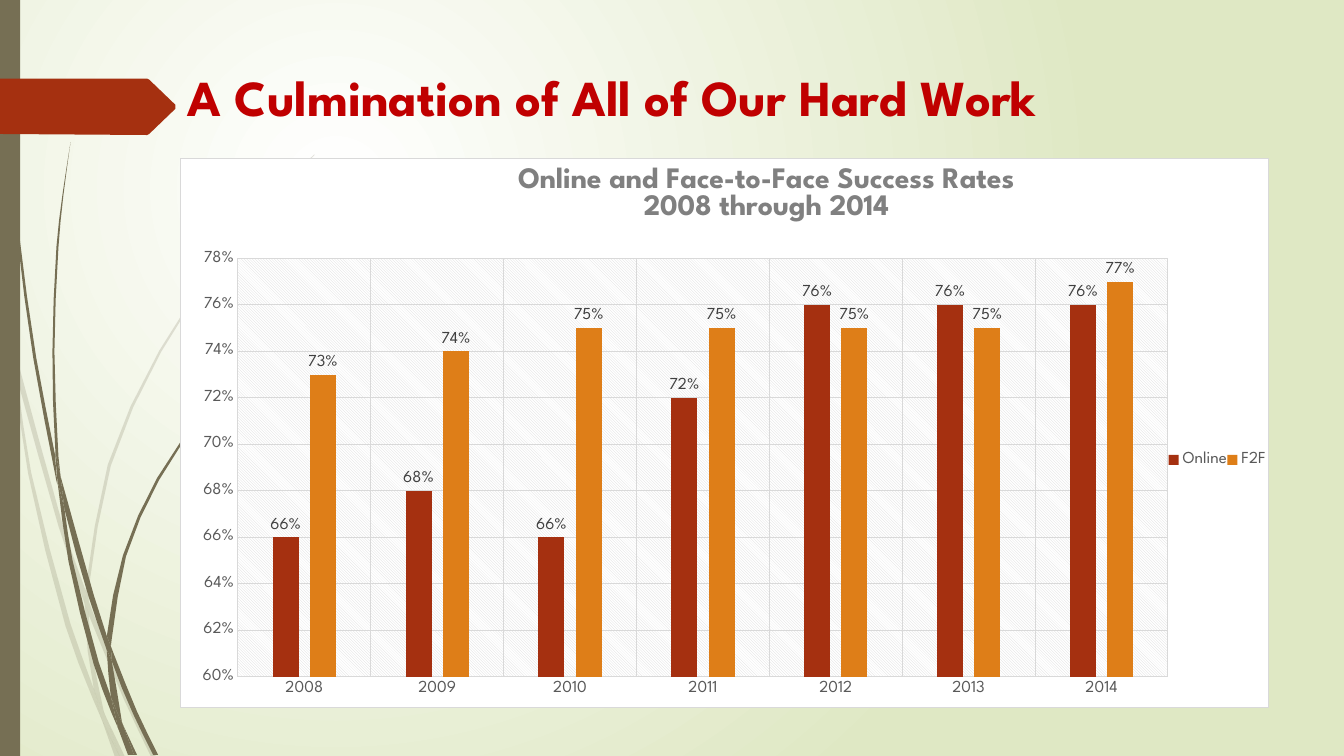
from dataclasses import dataclass
from math import dist

from lxml import etree
from pptx import Presentation
from pptx.chart.data import CategoryChartData
from pptx.dml.color import RGBColor as RGB
from pptx.enum.chart import XL_CHART_TYPE as ChartType
from pptx.enum.chart import XL_LABEL_POSITION as LabelPos
from pptx.enum.chart import XL_LEGEND_POSITION as LegendPos
from pptx.enum.chart import XL_TICK_MARK as Tick
from pptx.enum.shapes import MSO_SHAPE as Preset
from pptx.oxml import parse_xml
from pptx.oxml.ns import nsdecls, qn
from pptx.util import Pt

Point = tuple[float, float]
GRID = Pt(0.72)  # unit of the decoration outlines
CHART_SIZE = (777.4, 393.5)  # points


@dataclass(frozen=True)
class Theme:
    font: str = "League Spartan"
    olive: str = "766F54"
    rust: str = "A53010"
    orange: str = "DE7E18"
    red: str = "C00000"
    white: str = "FFFFFF"
    sage: str = "DFE8C4"
    rule: str = "D9D9D9"
    heading_gray: str = "808080"
    axis_gray: str = "595959"
    label_gray: str = "404040"
    title_size: float = 36
    heading_size: float = 21.2
    label_size: float = 12


@dataclass(frozen=True)
class Wisp:
    """A blade of grass between two smooth edges, in grid units."""
    near: list[Point]
    far: list[Point]


@dataclass(frozen=True)
class Rates:
    name: str
    values: tuple[float, ...]
    color: str


THEME = Theme()
YEARS = [str(year) for year in range(2008, 2015)]
SUCCESS = [
    Rates("Online", (0.66, 0.68, 0.66, 0.72, 0.76, 0.76, 0.76), THEME.rust),
    Rates("F2F", (0.73, 0.74, 0.75, 0.75, 0.75, 0.75, 0.77), THEME.orange),
]
PALE_WISPS = [
    Wisp([(11, 350), (9, 322), (0, 282)], [(0, 299), (10, 344)]),
    Wisp([(17, 376), (58, 522), (84, 599)], [(85, 586), (62, 520), (14, 345)]),
    Wisp([(88, 610), (123, 694), (150, 751)], [(155, 751), (127, 692), (92, 607), (88, 596)]),
    Wisp([(105, 711), (119, 751)], [(124, 751), (105, 711)]),
    Wisp([(11, 350), (28, 470), (65, 621), (92, 693), (101, 714)],
         [(99, 707), (93, 683), (70, 619), (31, 469), (17, 376)]),
    Wisp([(84, 599), (87, 646), (93, 683), (96, 692), (105, 711)],
         [(103, 706), (91, 646), (88, 610), (88, 608)]),
    Wisp([(312, 153), (289, 175), (268, 197), (228, 244), (158, 348), (107, 461), (85, 584), (85, 586)],
         [(88, 596), (88, 584), (110, 462), (160, 349), (229, 245), (268, 198), (290, 175), (312, 154)]),
    Wisp([(101, 714), (114, 751)], [(119, 751), (101, 714)]),
    Wisp([(88, 610), (88, 596)], [(85, 586), (84, 599), (88, 608)]),
    Wisp([(93, 683), (99, 707), (101, 714), (119, 751)], [(119, 751), (105, 711), (96, 692)]),
]
DARK_WISPS = [
    Wisp([(3, 0), (4, 48), (7, 110), (17, 233), (33, 355), (56, 477), (57, 481)],
         [(55, 457), (55, 453), (36, 355), (19, 232), (8, 109), (5, 48), (4, 0)]),
    Wisp([(60, 472), (64, 505), (88, 592), (106, 645)], [(106, 633), (106, 631), (93, 590), (60, 472)]),
    Wisp([(110, 641), (111, 656), (132, 708), (152, 749)], [(157, 749), (136, 706), (113, 649)]),
    Wisp([(57, 477), (68, 557), (93, 659), (111, 708), (117, 722)],
         [(116, 717), (110, 691), (98, 657), (72, 556), (64, 505)]),
    Wisp([(70, 141), (62, 193), (56, 245), (52, 349), (55, 449), (60, 472)],
         [(60, 472), (58, 453), (54, 349), (58, 245), (63, 193), (70, 141)]),
    Wisp([(122, 719), (133, 749)], [(136, 749), (122, 719)]),
    Wisp([(55, 449), (55, 453), (57, 477), (64, 505)], [(60, 472), (55, 449)]),
    Wisp([(260, 344), (245, 358), (231, 373), (204, 405), (156, 474), (122, 551), (106, 631), (110, 641)],
         [(111, 633), (125, 552), (158, 476), (205, 406), (231, 374), (245, 359), (261, 344)]),
    Wisp([(117, 722), (127, 749)], [(131, 749), (117, 722)]),
    Wisp([(106, 645), (110, 691), (116, 706), (122, 719)], [(121, 716), (111, 656), (109, 651)]),
    Wisp([(106, 631), (106, 645), (109, 651), (111, 656)], [(110, 641), (106, 631)]),
    Wisp([(110, 691), (116, 717), (117, 722), (130, 749)], [(133, 749), (122, 719), (116, 706)]),
]
ARROW = [(0, 78), (146, 78), (148, 79), (174, 104), (174, 108), (148, 133), (146, 134), (0, 133)]


def bend(nodes: list[Point], long_span: float = 45) -> list[Point]:
    """Add a middle point to each long span, so that the edge curves."""
    ends = [nodes[0], *nodes, nodes[-1]]
    slopes = []
    for before, after in zip(ends, ends[2:]):
        length = dist(before, after)
        slopes.append([(b - a) / length for a, b in zip(before, after)])
    curve = [nodes[0]]
    for start, end, leave, arrive in zip(nodes, nodes[1:], slopes, slopes[1:]):
        span = dist(start, end)
        if span > long_span:
            curve.append(tuple((a + b) / 2 + span * (u - v) / 8
                               for a, b, u, v in zip(start, end, leave, arrive)))
        curve.append(end)
    return curve


def paint(shape, color: str) -> None:
    shape.shadow.inherit = False
    shape.fill.solid()
    shape.fill.fore_color.rgb = RGB.from_string(color)
    shape.line.fill.background()


def draw_outline(shapes, points: list[Point], color: str, opacity: int = 100) -> None:
    corners = [(x * GRID, y * GRID) for x, y in points]
    builder = shapes.build_freeform(*corners[0])
    builder.add_line_segments(corners[1:], close=True)
    outline = builder.convert_to_shape()
    paint(outline, color)
    if opacity < 100:
        tint = outline.fill._xPr.find(qn("a:solidFill"))[0]
        etree.SubElement(tint, qn("a:alpha"), val=str(opacity * 1000))


def style(font, size: float, color: str, bold: bool = False) -> None:
    font.name, font.size, font.bold = THEME.font, Pt(size), bold
    font.color.rgb = RGB.from_string(color)


def lay_out(part, index: int, *place: float, inner: bool = False) -> None:
    """Fix a chart part at left, top and, if given, width, height in points."""
    for old in part.findall(qn("c:layout")):
        part.remove(old)
    target = '<c:layoutTarget val="inner"/>' if inner else ""
    modes = '<c:xMode val="edge"/><c:yMode val="edge"/>'
    sizes = "".join(f'<c:{key} val="{length / whole:.4f}"/>'
                    for key, length, whole in zip("xywh", place, CHART_SIZE * 2))
    part.insert(index, parse_xml(f'<c:layout {nsdecls("c")}><c:manualLayout>{target}{modes}{sizes}'
                                 "</c:manualLayout></c:layout>"))


def frame(fill: str, line: str = ""):
    return parse_xml(f'<c:spPr {nsdecls("c", "a")}>{fill}{line}</c:spPr>')


def solid(color: str) -> str:
    return f'<a:solidFill><a:srgbClr val="{color}"/></a:solidFill>'


def draw_background(slide) -> None:
    slide.background.fill.gradient()
    gradient = slide.background._cSld.find(".//" + qn("a:gradFill"))
    gradient.getparent().replace(gradient, parse_xml(
        f'<a:gradFill {nsdecls("a")} rotWithShape="1"><a:gsLst>'
        f'<a:gs pos="0"><a:srgbClr val="{THEME.white}"/></a:gs>'
        f'<a:gs pos="100000"><a:srgbClr val="{THEME.sage}"/></a:gs></a:gsLst>'
        '<a:path path="circle"><a:fillToRect l="50000" t="50000" r="100000" b="100000"/></a:path>'
        "</a:gradFill>"))


def draw_chart(slide) -> None:
    data = CategoryChartData(number_format="0%")
    data.categories = YEARS
    for rates in SUCCESS:
        data.add_series(rates.name, rates.values)
    chart = slide.shapes.add_chart(ChartType.COLUMN_CLUSTERED, Pt(128.8), Pt(112.5),
                                   *map(Pt, CHART_SIZE), data).chart
    style(chart.font, THEME.label_size, THEME.axis_gray)

    # Heading and legend
    heading = chart.chart_title.text_frame
    heading.text = "Online and Face-to-Face Success Rates\n2008 through 2014"
    for line in heading.paragraphs:
        style(line.runs[0].font, THEME.heading_size, THEME.heading_gray, bold=True)
    chart.chart_title.include_in_layout = False
    lay_out(chart.chart_title._element, 1, 239, 3)
    chart.has_legend = True
    chart.legend.position = LegendPos.RIGHT
    chart.legend.include_in_layout = False
    style(chart.legend.font, THEME.label_size, THEME.axis_gray)
    lay_out(chart.legend._element, 1, 706, 208, 70, 16)

    # Axes
    rates_axis, years_axis = chart.value_axis, chart.category_axis
    rates_axis.minimum_scale, rates_axis.maximum_scale, rates_axis.major_unit = 0.6, 0.78, 0.02
    rates_axis.tick_labels.number_format = "0%"
    rates_axis.tick_labels.number_format_is_linked = False
    for axis in (rates_axis, years_axis):
        axis.major_tick_mark = axis.minor_tick_mark = Tick.NONE
        axis.has_major_gridlines = True
        style(axis.tick_labels.font, THEME.label_size, THEME.axis_gray)
        for rule in (axis.major_gridlines.format.line, axis.format.line):
            rule.color.rgb, rule.width = RGB.from_string(THEME.rule), Pt(0.75)
    rates_axis.format.line.fill.background()

    # Columns and their labels
    plot = chart.plots[0]
    plot.gap_width, plot.overlap, plot.vary_by_categories = 267, -43, False
    for series, rates in zip(plot.series, SUCCESS):
        series.format.fill.solid()
        series.format.fill.fore_color.rgb = RGB.from_string(rates.color)
        labels = series.data_labels
        labels.show_value, labels.position = True, LabelPos.OUTSIDE_END
        style(labels.font, THEME.label_size, THEME.label_gray)

    # Hatched plot area on a white, thinly framed chart
    space = chart._chartSpace
    area = space.find(".//" + qn("c:plotArea"))
    lay_out(area, 0, 40.8, 71.8, 665, 299.5, inner=True)
    area.append(frame(f'<a:pattFill prst="ltDnDiag"><a:fgClr><a:srgbClr val="{THEME.rule}"/></a:fgClr>'
                      f'<a:bgClr><a:srgbClr val="{THEME.white}"/></a:bgClr></a:pattFill>'))
    space.find(qn("c:chart")).addnext(
        frame(solid(THEME.white), f'<a:ln w="{Pt(0.75)}">{solid(THEME.rule)}</a:ln>'))


def main() -> None:
    deck = Presentation()
    deck.slide_width, deck.slide_height = Pt(960), Pt(540)
    slide = deck.slides.add_slide(deck.slide_layouts[6])
    draw_background(slide)

    # Grass, side band and arrow
    for wisps, opacity in ((PALE_WISPS, 20), (DARK_WISPS, 100)):
        tuft = slide.shapes.add_group_shape()
        for wisp in wisps:
            draw_outline(tuft.shapes, bend(wisp.near) + bend(wisp.far), THEME.olive, opacity)
    paint(slide.shapes.add_shape(Preset.RECTANGLE, 0, 0, Pt(14.4), Pt(540)), THEME.olive)
    draw_outline(slide.shapes, ARROW, THEME.rust)

    # Title
    title = slide.shapes.add_textbox(Pt(127), Pt(43.9), Pt(797.8), Pt(114.5)).text_frame
    title.word_wrap = True
    title.text = "A Culmination of All of Our Hard Work"
    style(title.paragraphs[0].runs[0].font, THEME.title_size, THEME.red, bold=True)

    draw_chart(slide)
    deck.save("out.pptx")


if __name__ == "__main__":
    main()
